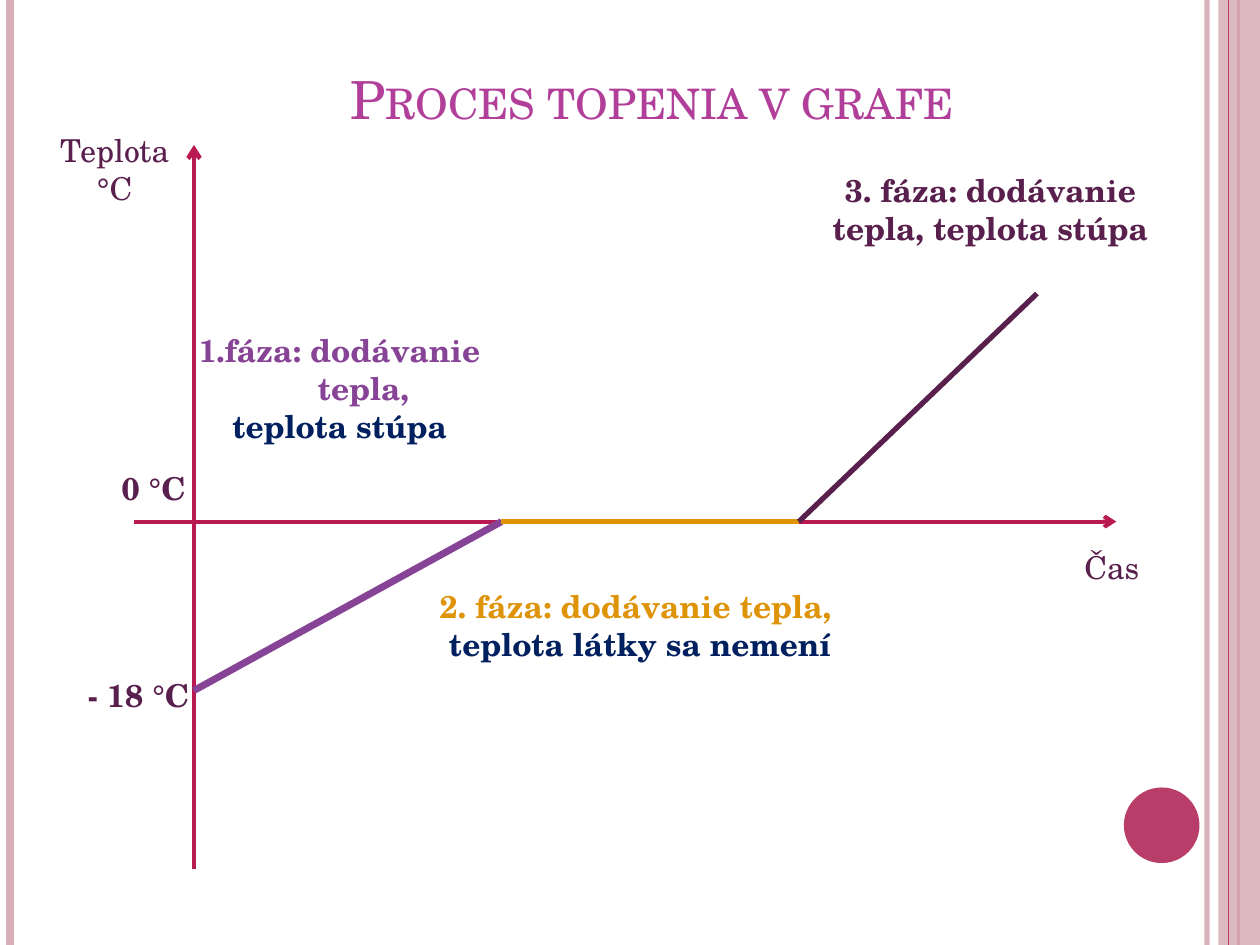
import pptx
import pptx.dml.color
import pptx.enum.shapes
import pptx.enum.text
import pptx.oxml.ns
import pptx.util
from lxml import etree
from pptx.util import Inches

FONT = "TeX Gyre Schola"
PLUM, PURPLE, ORANGE, NAVY = "591F4D", "874396", "DF9307", "002060"
AXIS, ROSE, PINK, TITLE = "B81A51", "B83D68", "D8AFB9", "B13F9A"


def color(value):
    return pptx.dml.color.RGBColor.from_string(value)


def add_child(parent, tag, **attributes):
    return etree.SubElement(parent, pptx.oxml.ns.qn(tag), **attributes)


def set_alpha(fill_parent, percent):
    value = next(fill_parent.iter(pptx.oxml.ns.qn("a:srgbClr")))
    add_child(value, "a:alpha", val=str(percent * 1000))


def add_line(page, start, end, shade, width, arrow=False, alpha=None):
    points = [Inches(value) for value in (*start, *end)]
    line = page.shapes.add_connector(
        pptx.enum.shapes.MSO_CONNECTOR.STRAIGHT, *points)
    line.line.color.rgb = color(shade)
    line.line.width = pptx.util.Pt(width)
    properties = line.line._get_or_add_ln()
    if alpha:
        set_alpha(properties, alpha)
    if arrow:
        add_child(properties, "a:tailEnd", type="arrow")
    add_child(line._element.spPr, "a:effectLst")


def add_solid(page, kind, box, shade, alpha=None):
    shape = page.shapes.add_shape(kind, *[Inches(value) for value in box])
    shape.shadow.inherit = False
    shape.fill.solid()
    shape.fill.fore_color.rgb = color(shade)
    shape.line.fill.background()
    if alpha:
        set_alpha(shape._element.spPr, alpha)


def add_text(page, box, lines, size=18, bold=False, hanging=0):
    shape = page.shapes.add_textbox(*[Inches(value) for value in box])
    frame = shape.text_frame
    frame.word_wrap = True
    for index, (text, shade) in enumerate(lines):
        para = frame.add_paragraph() if index else frame.paragraphs[0]
        para.text = text
        para.alignment = pptx.enum.text.PP_ALIGN.CENTER
        para.font.name = FONT
        para.font.size = pptx.util.Pt(size)
        para.font.bold = bold
        para.font.color.rgb = color(shade)
        if hanging:
            properties = para._p.get_or_add_pPr()
            properties.set("marL", str(Inches(hanging)))
            properties.set("indent", str(-Inches(hanging)))
    return frame


def draw_frame(page, left, top, width, height):
    right, bottom = left + width, top + height
    kinds = pptx.enum.shapes.MSO_SHAPE

    def rule(x, shade, weight, alpha=None):
        add_line(page, (x, top), (x, bottom), shade, weight, alpha=alpha)

    rule(right - 0.42, PINK, 3, 93)
    rule(left + 0.08, PINK, 4.5)
    rule(right - 0.17, ROSE, 1.5)
    add_solid(page, kinds.RECTANGLE, (right - 0.33, top, 0.33, height), PINK, 87)
    rule(right - 0.25, ROSE, 0.75)
    add_solid(page, kinds.OVAL, (right - 1.08, bottom - 1.25, 0.6, 0.6), ROSE)


def draw_title(page, left, top, width, height):
    frame = add_text(page, (left, top, width, height),
                     [("Proces topenia v grafe", TITLE)], size=30)
    frame.vertical_anchor = pptx.enum.text.MSO_ANCHOR.BOTTOM
    frame.paragraphs[0].font._rPr.set("cap", "small")


def draw_graph(page, left, top, width, height):
    axis_x, axis_y = left + 1.26, top + 3.15
    add_line(page, (axis_x, top + height), (axis_x, top + 0.16), AXIS, 2.5, True)
    add_line(page, (left + 0.78, axis_y), (left + 8.58, axis_y), AXIS, 2.25, True)

    curve = [(axis_x, axis_y + 1.34), (axis_x + 2.44, axis_y),
             (axis_x + 4.8, axis_y), (axis_x + 6.69, axis_y - 1.81)]
    styles = [(PURPLE, 4), (ORANGE, 3.25), (PLUM, 3)]
    for start, end, (shade, weight) in zip(curve, curve[1:], styles):
        add_line(page, start, end, shade, weight)

    labels = [
        ((0, 0, 1.26, 0.71), [("Teplota °C", PLUM)], False, 0),
        ((7.95, 3.31, 1.26, 0.4), [("Čas ", PLUM)], False, 0),
        ((0.47, 2.68, 0.94, 0.4), [("0 °C", PLUM)], True, 0),
        ((0.23, 4.33, 1.18, 0.4), [("- 18 °C", PLUM)], True, 0),
        ((1.05, 1.59, 2.73, 1.01),
         [("1.fáza: dodávanie tepla,", PURPLE), ("teplota stúpa", NAVY)], True, 0.38),
        ((3.08, 3.62, 3.44, 0.71),
         [("2. fáza: dodávanie tepla, ", ORANGE),
          ("teplota látky sa nemení", NAVY)], True, 0),
        ((6.22, 0.32, 2.72, 0.71),
         [("3. fáza: dodávanie tepla, teplota stúpa", PLUM)], True, 0),
    ]
    for (x, y, label_width, label_height), lines, bold, hanging in labels:
        add_text(page, (left + x, top + y, label_width, label_height), lines,
                 bold=bold, hanging=hanging)


def main():
    deck = pptx.Presentation()
    deck.slide_width, deck.slide_height = Inches(10), Inches(7.5)
    page = deck.slides.add_slide(deck.slide_layouts[6])
    draw_frame(page, 0, 0, 10, 7.5)
    draw_title(page, 1.09, 0.23, 8.17, 0.85)
    draw_graph(page, 0.28, 0.99, 9.21, 5.91)
    deck.save("out.pptx")


if __name__ == "__main__":
    main()
